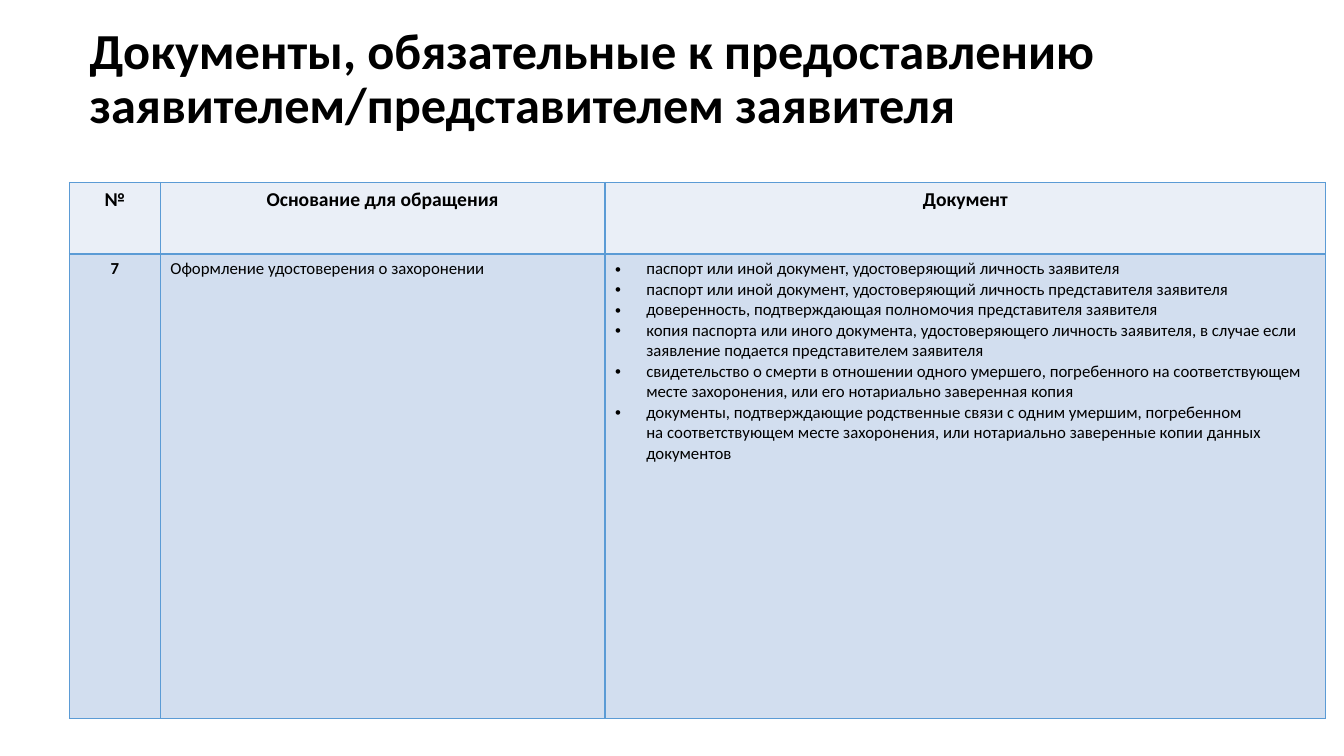
from dataclasses import dataclass

from lxml import etree
from pptx import Presentation
from pptx.dml.color import RGBColor
from pptx.enum import text
from pptx.oxml import ns
from pptx.util import Inches, Pt


@dataclass(frozen=True)
class Theme:
    font: str = "Calibri"
    ink: str = "000000"
    border: str = "5B9BD5"
    header_fill: str = "EAEFF7"
    body_fill: str = "D2DEEF"
    title_size: int = 36
    header_size: int = 14
    body_size: int = 12
    border_width: int = 1


@dataclass(frozen=True)
class CellSpec:
    lines: tuple[str, ...]
    size: int
    fill: str
    bold: bool = False
    centered: bool = False
    bulleted: bool = False


THEME = Theme()
BULLET_INDENT = Inches(0.31)
COLUMN_WIDTHS = (0.9, 4.41, 7.15)
ROW_HEIGHTS = (0.71, 4.61)
TITLE = "Документы, обязательные к предоставлению заявителем/представителем заявителя"
HEADERS = ("№", "Основание для обращения", "Документ")
DOCUMENTS = (
    "паспорт или иной документ, удостоверяющий личность заявителя",
    "паспорт или иной документ, удостоверяющий личность представителя заявителя",
    "доверенность, подтверждающая полномочия представителя заявителя",
    "копия паспорта или иного документа, удостоверяющего личность заявителя, "
    "в случае если заявление подается представителем заявителя",
    "свидетельство о смерти в отношении одного умершего, погребенного "
    "на соответствующем месте захоронения, или его нотариально заверенная копия",
    "документы, подтверждающие родственные связи с одним умершим, погребенном \v"
    "на соответствующем месте захоронения, или нотариально заверенные копии данных документов",
)
ROWS = (
    tuple(
        CellSpec((header,), THEME.header_size, THEME.header_fill, bold=True, centered=True)
        for header in HEADERS
    ),
    (
        CellSpec(("7",), THEME.body_size, THEME.body_fill, bold=True, centered=True),
        CellSpec(("Оформление удостоверения о захоронении",), THEME.body_size, THEME.body_fill),
        CellSpec(DOCUMENTS, THEME.body_size, THEME.body_fill, bulleted=True),
    ),
)


def set_font(p, size: int, bold: bool) -> None:
    p.font.name = THEME.font
    p.font.size = Pt(size)
    p.font.bold = bold
    p.font.color.rgb = RGBColor.from_string(THEME.ink)


def add_bullet(p) -> None:
    props = p._p.get_or_add_pPr()
    props.set("marL", str(BULLET_INDENT))
    props.set("indent", str(-BULLET_INDENT))
    etree.SubElement(props, ns.qn("a:buFont"), typeface="Arial")
    etree.SubElement(props, ns.qn("a:buChar"), char="•")


def add_borders(cell) -> None:
    props = cell._tc.get_or_add_tcPr()
    for side in ("lnL", "lnR", "lnT", "lnB"):
        line = etree.SubElement(props, ns.qn(f"a:{side}"), w=str(Pt(THEME.border_width)))
        fill = etree.SubElement(line, ns.qn("a:solidFill"))
        etree.SubElement(fill, ns.qn("a:srgbClr"), val=THEME.border)


def fill_cell(cell, spec: CellSpec) -> None:
    add_borders(cell)
    cell.fill.solid()
    cell.fill.fore_color.rgb = RGBColor.from_string(spec.fill)
    tf = cell.text_frame
    for i, line in enumerate(spec.lines):
        p = tf.add_paragraph() if i else tf.paragraphs[0]
        p.text = line
        if spec.centered:
            p.alignment = text.PP_ALIGN.CENTER
        if spec.bulleted:
            add_bullet(p)
        set_font(p, spec.size, spec.bold)


def add_title(s) -> None:
    tf = s.shapes.add_textbox(Inches(0.79), Inches(0.07), Inches(11.92), Inches(1.45)).text_frame
    tf.word_wrap = True
    tf.vertical_anchor = text.MSO_ANCHOR.MIDDLE
    p = tf.paragraphs[0]
    p.text = TITLE
    p.line_spacing = 0.9
    set_font(p, THEME.title_size, True)


def add_documents_table(s) -> None:
    table = s.shapes.add_table(
        len(ROWS), len(HEADERS), Inches(0.69), Inches(1.81),
        Inches(sum(COLUMN_WIDTHS)), Inches(sum(ROW_HEIGHTS)),
    ).table
    table.first_row = False
    table.horz_banding = False
    for column, width in zip(table.columns, COLUMN_WIDTHS):
        column.width = Inches(width)
    for row, height, specs in zip(table.rows, ROW_HEIGHTS, ROWS):
        row.height = Inches(height)
        for cell, spec in zip(row.cells, specs):
            fill_cell(cell, spec)


def main() -> None:
    prs = Presentation()
    prs.slide_width = Inches(13.33)
    prs.slide_height = Inches(7.5)
    s = prs.slides.add_slide(prs.slide_layouts[6])
    add_title(s)
    add_documents_table(s)
    prs.save("out.pptx")


if __name__ == "__main__":
    main()
